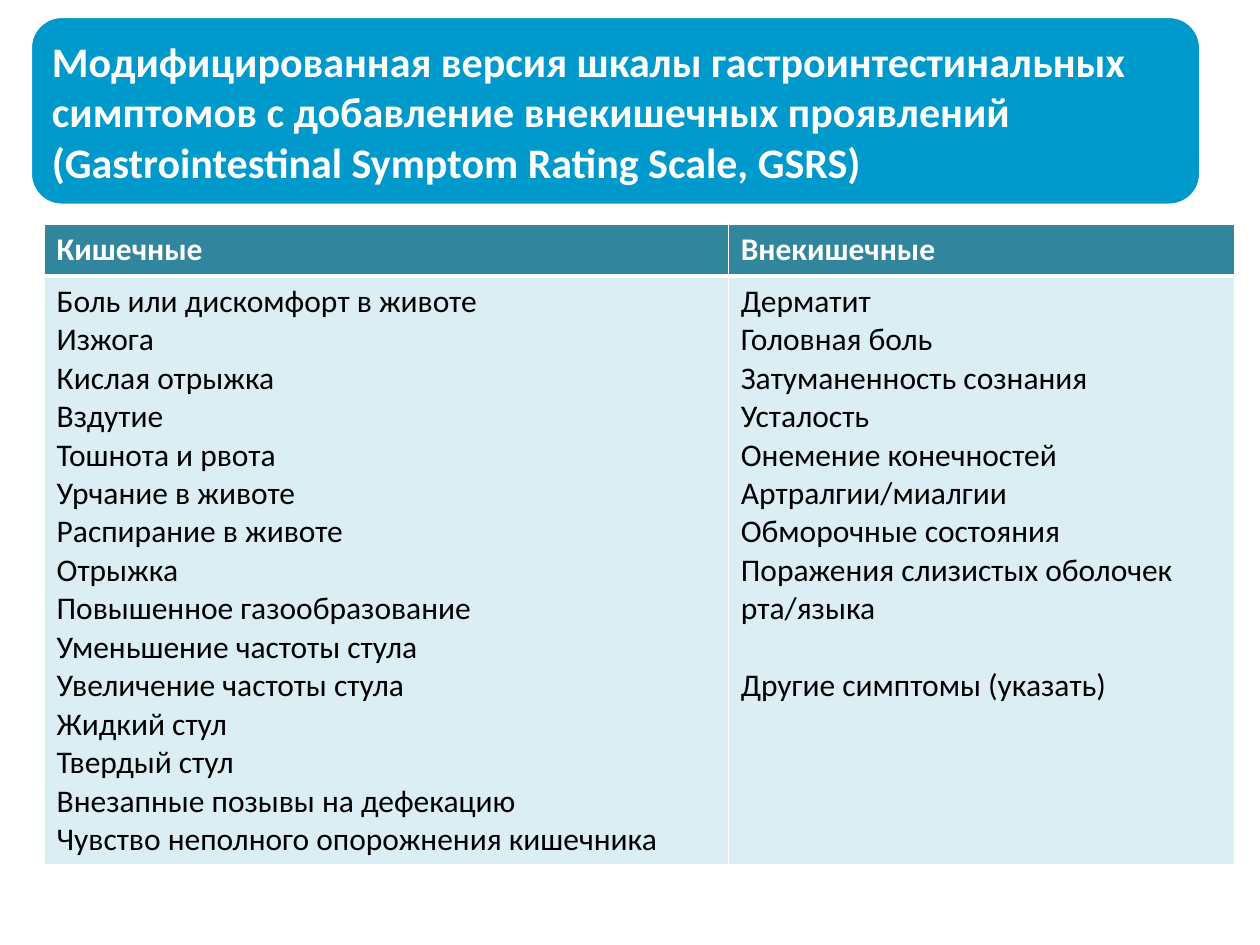
from pptx import Presentation
from pptx.dml.color import RGBColor
from pptx.enum.shapes import MSO_SHAPE
from pptx.enum.text import MSO_ANCHOR, PP_ALIGN
from pptx.oxml import parse_xml
from pptx.oxml.ns import nsdecls
from pptx.util import Inches, Pt

ROUNDED = MSO_SHAPE.ROUNDED_RECTANGLE
MIDDLE = MSO_ANCHOR.MIDDLE
LEFT = PP_ALIGN.LEFT

TITLE = (
    "Модифицированная версия шкалы гастроинтестинальных симптомов "
    "с добавление внекишечных проявлений "
    "(Gastrointestinal Symptom Rating Scale, GSRS)"
)
SYMPTOMS = {
    "Кишечные": [
        "Боль или дискомфорт в животе",
        "Изжога",
        "Кислая отрыжка",
        "Вздутие",
        "Тошнота и рвота",
        "Урчание в животе",
        "Распирание в животе",
        "Отрыжка",
        "Повышенное газообразование",
        "Уменьшение частоты стула",
        "Увеличение частоты стула",
        "Жидкий стул",
        "Твердый стул",
        "Внезапные позывы на дефекацию",
        "Чувство неполного опорожнения кишечника",
    ],
    "Внекишечные": [
        "Дерматит",
        "Головная боль",
        "Затуманенность сознания",
        "Усталость",
        "Онемение конечностей",
        "Артралгии/миалгии",
        "Обморочные состояния",
        "Поражения слизистых оболочек рта/языка",
        "Другие симптомы (указать)",
    ],
}
SEPARATED = "Другие симптомы (указать)"
COLUMN_WIDTHS = (5.43, 4.02)
ROW_HEIGHTS = (0.41, 4.6)

THEME = {
    "font": "Calibri",
    "title_size": 24,
    "table_size": 18,
    "line_gap": 22,
    "white": "FFFFFF",
    "black": "000000",
    "banner": "0099CC",
    "header": "31859C",
    "body": "DBEEF4",
}


def color(name):
    """Return a theme colour."""
    return RGBColor.from_string(THEME[name])


def write_text(frame, lines, *, size, ink, bold=False):
    """Write one formatted paragraph per line."""
    for index, line in enumerate(lines):
        paragraph = frame.add_paragraph() if index else frame.paragraphs[0]
        paragraph.alignment = LEFT
        if line == SEPARATED:
            paragraph.space_before = Pt(THEME["line_gap"])
        run = paragraph.add_run()
        run.text = line
        run.font.name = THEME["font"]
        run.font.size = Pt(THEME[size])
        run.font.bold = bold
        run.font.color.rgb = color(ink)


def set_borders(cell, bottom):
    """Give a cell white borders with its own bottom width in points."""
    properties = cell._tc.get_or_add_tcPr()
    widths = {"lnL": 1, "lnR": 1, "lnT": 1, "lnB": bottom}
    for index, (side, width) in enumerate(widths.items()):
        properties.insert(index, parse_xml(
            f'<a:{side} {nsdecls("a")} w="{Pt(width)}"><a:solidFill>'
            f'<a:srgbClr val="{THEME["white"]}"/></a:solidFill></a:{side}>'
        ))


def add_symptom_table(slide):
    """Add the two-column symptom table."""
    table = slide.shapes.add_table(
        2, len(SYMPTOMS), Inches(0.35), Inches(1.78),
        Inches(sum(COLUMN_WIDTHS)), Inches(sum(ROW_HEIGHTS)),
    ).table
    for row, height in zip(table.rows, ROW_HEIGHTS):
        row.height = Inches(height)
    for index, (heading, symptoms) in enumerate(SYMPTOMS.items()):
        table.columns[index].width = Inches(COLUMN_WIDTHS[index])
        rows = (
            ([heading], "header", "white", True, 3),
            (symptoms, "body", "black", False, 1),
        )
        for row, (lines, fill, ink, bold, bottom) in enumerate(rows):
            cell = table.cell(row, index)
            cell.fill.solid()
            cell.fill.fore_color.rgb = color(fill)
            set_borders(cell, bottom)
            write_text(cell.text_frame, lines, size="table_size", ink=ink, bold=bold)


def add_title(slide):
    """Add the rounded title banner."""
    shape = slide.shapes.add_shape(
        ROUNDED, Inches(0.24), Inches(0.13), Inches(9.29), Inches(1.5)
    )
    shape.shadow.inherit = False
    shape.fill.solid()
    shape.fill.fore_color.rgb = color("banner")
    shape.line.color.rgb = color("white")
    shape.line.width = Pt(2)
    shape.text_frame.word_wrap = True
    shape.text_frame.vertical_anchor = MIDDLE
    write_text(shape.text_frame, [TITLE], size="title_size", ink="white", bold=True)


def main():
    """Build and save the slide."""
    presentation = Presentation()
    presentation.slide_width = Inches(10)
    presentation.slide_height = Inches(7.5)
    slide = presentation.slides.add_slide(presentation.slide_layouts[6])
    add_symptom_table(slide)
    add_title(slide)
    presentation.save("out.pptx")


if __name__ == "__main__":
    main()
